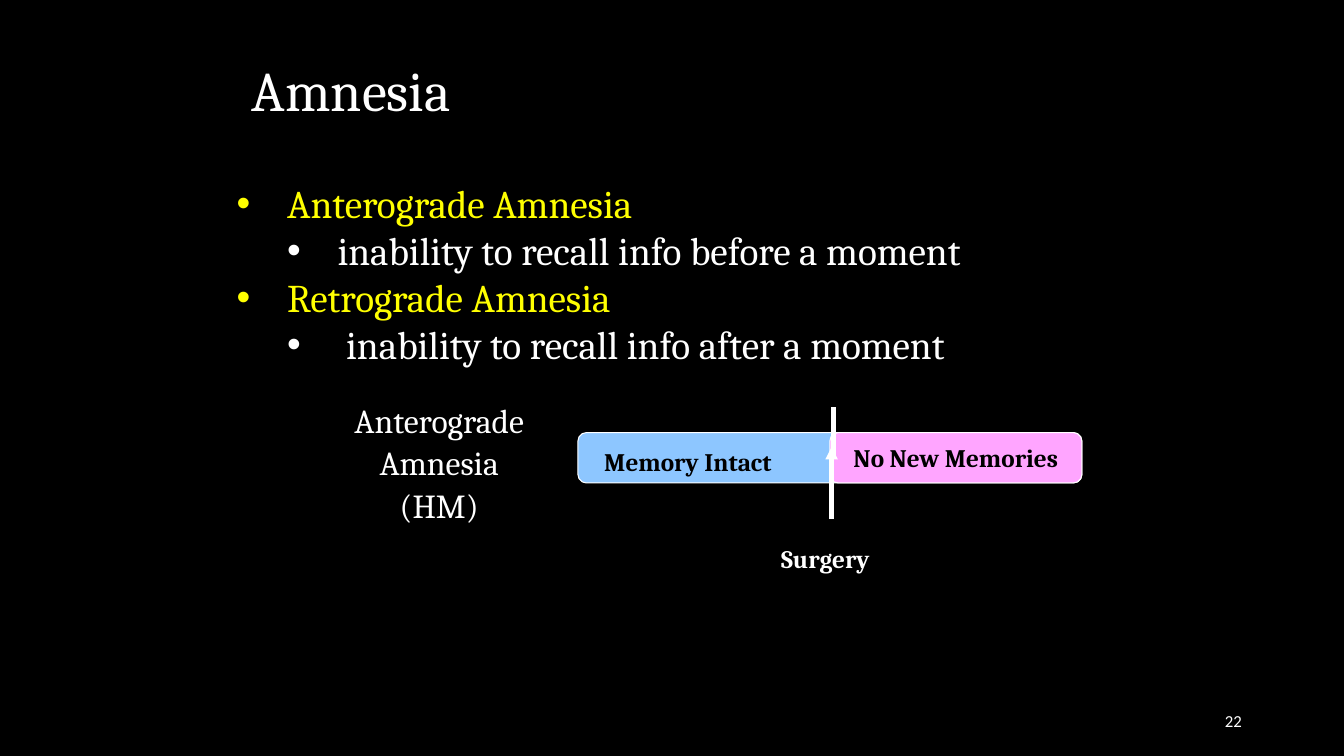
from pptx import Presentation
from pptx.dml.color import RGBColor
from pptx.enum.shapes import MSO_CONNECTOR as Connector, MSO_SHAPE as Shape
from pptx.enum.text import MSO_ANCHOR as Anchor, PP_ALIGN as Align
from pptx.oxml.xmlchemy import OxmlElement as Element
from pptx.util import Inches, Pt

COLORS = {
    "black": "000000",
    "white": "FFFFFF",
    "yellow": "FFFF00",
    "intact": "8DC6FF",
    "lost": "FFA5FF",
}
COLUMNS, ROWS = 80, 45


def color(name):
    return RGBColor.from_string(COLORS[name])


def apply(target, values):
    for name, value in values.items():
        setattr(target, name, value)


class SlideBuilder:
    """Holds the style and the current slide; positions are grid cells."""

    def __init__(self, presentation):
        self.column = presentation.slide_width / COLUMNS
        self.row = presentation.slide_height / ROWS
        self.font = "Cambria"
        self.slide = presentation.slides.add_slide(presentation.slide_layouts[6])
        background = self.slide.background.fill
        background.solid()
        background.fore_color.rgb = color("black")

    def cells(self, x, y, width, height):
        return (round(x * self.column), round(y * self.row),
                round(width * self.column), round(height * self.row))

    def styled_run(self, paragraph, text, ink="white", **font):
        run = paragraph.add_run()
        run.text = text
        apply(run.font, {"name": self.font, **font})
        run.font.color.rgb = color(ink)

    def text(self, box, lines, frame=None, layout=None, **font):
        text_frame = self.slide.shapes.add_textbox(*self.cells(*box)).text_frame
        apply(text_frame, {"word_wrap": True, **(frame or {})})
        for index, line in enumerate(lines):
            paragraph = text_frame.add_paragraph() if index else text_frame.paragraphs[0]
            apply(paragraph, layout or {})
            self.styled_run(paragraph, line, **font)

    def bullets(self, box, items, **font):
        text_frame = self.slide.shapes.add_textbox(*self.cells(*box)).text_frame
        text_frame.word_wrap = True
        for index, (level, line) in enumerate(items):
            paragraph = text_frame.add_paragraph() if index else text_frame.paragraphs[0]
            paragraph.level = level
            properties = paragraph._p.get_or_add_pPr()
            properties.set("marL", str(Inches(0.5 * (level + 1))))
            properties.set("indent", str(-Inches(0.5)))
            typeface, bullet = Element("a:buFont"), Element("a:buChar")
            typeface.set("typeface", "Arial")
            bullet.set("char", "•")
            properties.extend([typeface, bullet])
            self.styled_run(paragraph, line, ink="white" if level else "yellow", **font)

    def bar(self, box, fill, label="", **font):
        shape = self.slide.shapes.add_shape(Shape.ROUNDED_RECTANGLE, *self.cells(*box))
        shape.shadow.inherit = False
        shape.adjustments[0] = 0.167
        shape.fill.solid()
        shape.fill.fore_color.rgb = color(fill)
        shape.line.color.rgb = color("white")
        shape.line.width = Pt(0.75)
        if label:
            apply(shape.text_frame, {"word_wrap": False, "vertical_anchor": Anchor.MIDDLE})
            paragraph = shape.text_frame.paragraphs[0]
            paragraph.alignment = Align.CENTER
            self.styled_run(paragraph, label, **font)

    def vertical(self, x, start, end, width, arrow=False):
        left, top, right, bottom = self.cells(x, start, x, end)
        line = self.slide.shapes.add_connector(Connector.STRAIGHT, left, top, right, bottom)
        line.line.color.rgb = color("white")
        line.line.width = Pt(width)
        properties = line._element.spPr
        if arrow:
            head = Element("a:tailEnd")
            head.set("type", "triangle")
            properties.get_or_add_ln().append(head)
        properties.append(Element("a:effectLst"))


def main():
    presentation = Presentation()
    apply(presentation, {"slide_width": Inches(13.33), "slide_height": Inches(7.5)})
    builder = SlideBuilder(presentation)
    label = {"size": Pt(18), "bold": True}
    middle = {"vertical_anchor": Anchor.MIDDLE}
    single_line = {"word_wrap": False}

    # Title, case name and slide number
    builder.text((14.4, 1.8, 51, 7.5), ["Amnesia"], middle,
                 {"line_spacing": 0.9}, size=Pt(40))
    builder.text((19.14, 24.18, 14, 7.5), ["Anterograde", "Amnesia", "(HM)"],
                 layout={"alignment": Align.CENTER, "line_spacing": 0.7,
                         "space_before": Pt(10)}, size=Pt(24))
    builder.text((56.52, 41.7, 18, 2.4), ["22"], middle,
                 {"alignment": Align.RIGHT}, size=Pt(12), name="Calibri")

    # Memory timeline
    builder.bar((34.4, 25.75, 30, 3), "intact")
    builder.bar((49.4, 25.75, 15, 3), "lost", "No New Memories", ink="black", **label)
    builder.text((45.9, 32.04, 6.6, 2.4), ["Surgery"], single_line, **label)

    # Definitions
    builder.bullets((13.5, 10.38, 55, 11.94), [
        (0, "Anterograde Amnesia"),
        (1, "inability to recall info before a moment"),
        (0, "Retrograde Amnesia"),
        (1, " inability to recall info after a moment"),
    ], size=Pt(28))

    # Moment of surgery
    builder.vertical(49.5, 30.9, 26.6, 3, arrow=True)
    builder.text((35.22, 26.28, 11.46, 2.4), ["Memory Intact"], single_line,
                 {"alignment": Align.CENTER}, ink="black", **label)
    builder.vertical(49.6, 24.24, 27.24, 3.75)

    presentation.save("out.pptx")


if __name__ == "__main__":
    main()
